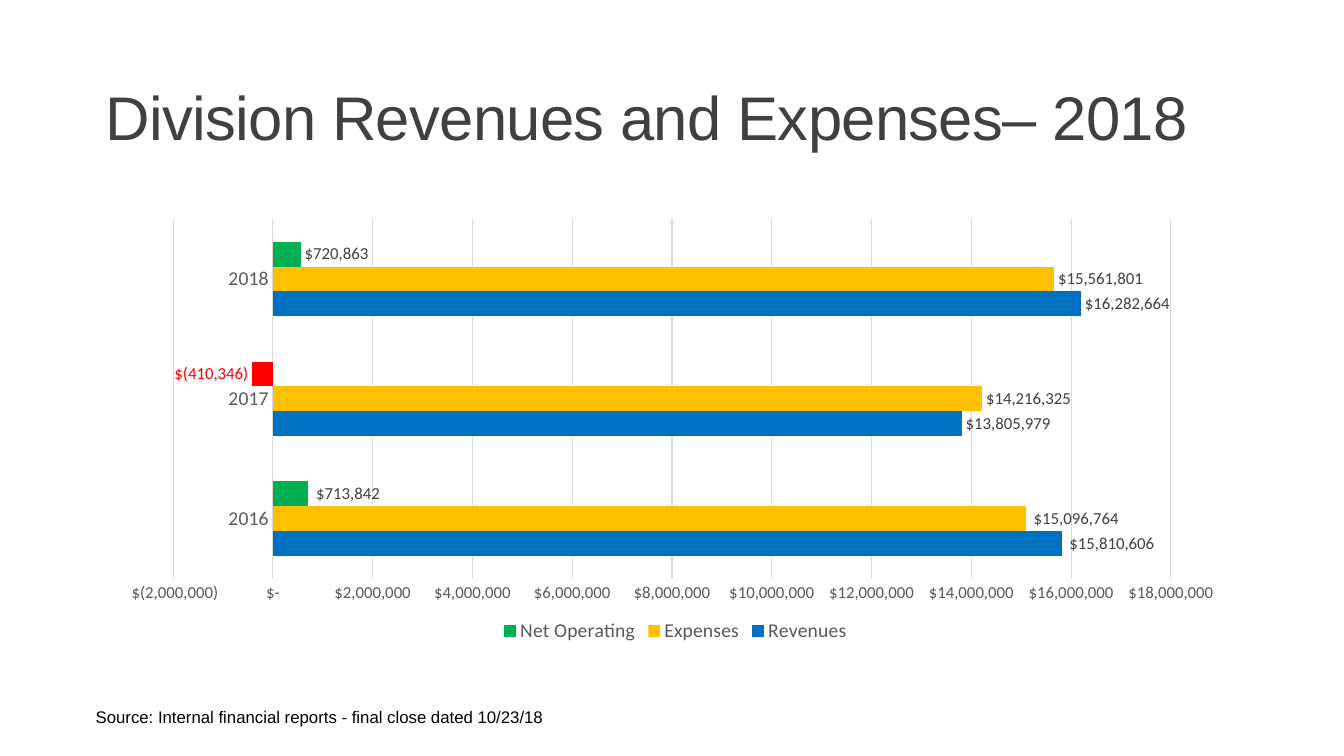
import lxml.etree
import pptx
import pptx.chart.data
import pptx.dml.color
import pptx.enum.chart
import pptx.enum.text
import pptx.oxml.ns
import pptx.util

Cm = pptx.util.Cm
RGBColor = pptx.dml.color.RGBColor

BLACK = RGBColor(0x00, 0x00, 0x00)
DARK_GREY = RGBColor(0x40, 0x40, 0x40)
MID_GREY = RGBColor(0x59, 0x59, 0x59)
LIGHT_GREY = RGBColor(0xD9, 0xD9, 0xD9)
BLUE = RGBColor(0x00, 0x70, 0xC0)
AMBER = RGBColor(0xFF, 0xC0, 0x00)
GREEN = RGBColor(0x00, 0xB0, 0x50)
RED = RGBColor(0xFF, 0x00, 0x00)

ACCOUNTING = '_("$"* #,##0_);_("$"* \\(#,##0\\);_("$"* "-"_);_(@_)'
YEARS = ["2016", "2017", "2018"]
# Name, colour, values, label texts by point
SERIES = [
    ("Revenues", BLUE, (15810606, 13805974, 16196739),
     {1: "$13,805,979", 2: "$16,282,664"}),
    ("Expenses", AMBER, (15096764, 14216320, 15659380),
     {1: "$14,216,325", 2: "$15,561,801"}),
    ("Net Operating", GREEN, (713842, -410346, 557359),
     {2: "$720,863"}),
]
PLOT_AREA = {"x": 0.047, "y": 0.035, "w": 0.9, "h": 0.811}


def format_font(font, size, color, name="Calibri"):
    font.size = pptx.util.Pt(size)
    font.name = name
    font.bold = False
    font.color.rgb = color


def write_text(text_frame, text, size=12, color=BLACK, name="Arial",
               line_spacing=None, character_spacing=None):
    paragraph = text_frame.paragraphs[0]
    paragraph.line_spacing = line_spacing
    run = paragraph.add_run()
    run.text = text
    format_font(run.font, size, color, name)
    if character_spacing is not None:
        run._r.get_or_add_rPr().set("spc", str(round(character_spacing * 100)))


def add_title(slide, left, top, width, height):
    title = slide.shapes.title
    title.left, title.top, title.width, title.height = left, top, width, height
    text_frame = title.text_frame
    text_frame.word_wrap = True
    text_frame.vertical_anchor = pptx.enum.text.MSO_ANCHOR.BOTTOM
    write_text(text_frame, "Division Revenues and Expenses– 2018", size=44,
               color=DARK_GREY, line_spacing=0.85, character_spacing=-0.5)
    text_frame.paragraphs[0].alignment = pptx.enum.text.PP_ALIGN.LEFT


def set_plot_area(chart):
    qualify = pptx.oxml.ns.qn
    plot_area = chart._chartSpace.find(".//" + qualify("c:plotArea"))
    for layout in plot_area.findall(qualify("c:layout")):
        plot_area.remove(layout)
    layout = lxml.etree.Element(qualify("c:layout"))
    plot_area.insert(0, layout)
    manual = lxml.etree.SubElement(layout, qualify("c:manualLayout"))
    settings = {"layoutTarget": "inner", "xMode": "edge", "yMode": "edge", **PLOT_AREA}
    for tag, value in settings.items():
        lxml.etree.SubElement(manual, qualify("c:" + tag)).set("val", str(value))


def format_axes(chart):
    no_ticks = pptx.enum.chart.XL_TICK_MARK.NONE
    for axis, size in ((chart.category_axis, 14), (chart.value_axis, 12)):
        axis.major_tick_mark = axis.minor_tick_mark = no_ticks
        format_font(axis.tick_labels.font, size, MID_GREY)

    value_axis = chart.value_axis
    value_axis.minimum_scale, value_axis.maximum_scale = -2000000, 18000000
    value_axis.major_unit = 2000000
    value_axis.tick_labels.number_format = ACCOUNTING
    value_axis.tick_labels.number_format_is_linked = False
    value_axis.format.line.fill.background()
    value_axis.has_major_gridlines = True
    for line in (value_axis.major_gridlines.format.line, chart.category_axis.format.line):
        line.color.rgb = LIGHT_GREY
        line.width = pptx.util.Pt(0.75)


def format_series(series, color, label_texts):
    outside = pptx.enum.chart.XL_LABEL_POSITION.OUTSIDE_END
    series.format.fill.solid()
    series.format.fill.fore_color.rgb = color
    series.invert_if_negative = False
    labels = series.data_labels
    labels.show_value = True
    labels.position = outside
    format_font(labels.font, 12, DARK_GREY)

    for index, text in label_texts.items():
        label = series.points[index].data_label
        write_text(label.text_frame, text, color=DARK_GREY, name="Calibri")
        label.position = outside

    # Losses stand out in red
    for index, value in enumerate(series.values):
        if value < 0:
            point = series.points[index]
            point.format.fill.solid()
            point.format.fill.fore_color.rgb = RED
            format_font(point.data_label.font, 12, RED)
            point.data_label.position = outside


def add_finance_chart(slide, left, top, width, height):
    chart_data = pptx.chart.data.CategoryChartData(number_format=ACCOUNTING)
    chart_data.categories = YEARS
    for name, color, values, label_texts in SERIES:
        chart_data.add_series(name, values)
    chart = slide.shapes.add_chart(pptx.enum.chart.XL_CHART_TYPE.BAR_CLUSTERED,
                                   left, top, width, height, chart_data).chart
    chart.has_title = False
    format_font(chart.font, 10, BLACK)
    set_plot_area(chart)
    format_axes(chart)

    plot = chart.plots[0]
    plot.gap_width = 182
    plot.vary_by_categories = False
    for series, (name, color, values, label_texts) in zip(plot.series, SERIES):
        format_series(series, color, label_texts)

    chart.has_legend = True
    chart.legend.position = pptx.enum.chart.XL_LEGEND_POSITION.BOTTOM
    chart.legend.include_in_layout = False
    format_font(chart.legend.font, 14, MID_GREY)


def add_source_note(slide, left, top, width, height):
    text_frame = slide.shapes.add_textbox(left, top, width, height).text_frame
    text_frame.word_wrap = True
    text_frame.auto_size = pptx.enum.text.MSO_AUTO_SIZE.SHAPE_TO_FIT_TEXT
    write_text(text_frame, "Source: Internal financial reports - final close dated 10/23/18")


def main():
    presentation = pptx.Presentation()
    presentation.slide_width, presentation.slide_height = Cm(33.87), Cm(19.05)
    slide = presentation.slides.add_slide(presentation.slide_layouts.get_by_name("Title Only"))
    add_title(slide, Cm(2.41), Cm(1.73), Cm(29.54), Cm(2.26))
    add_finance_chart(slide, Cm(3.05), Cm(5.13), Cm(27.94), Cm(11.18))
    add_source_note(slide, Cm(2.16), Cm(17.68), Cm(14.3), Cm(0.76))
    presentation.save("out.pptx")


if __name__ == "__main__":
    main()
